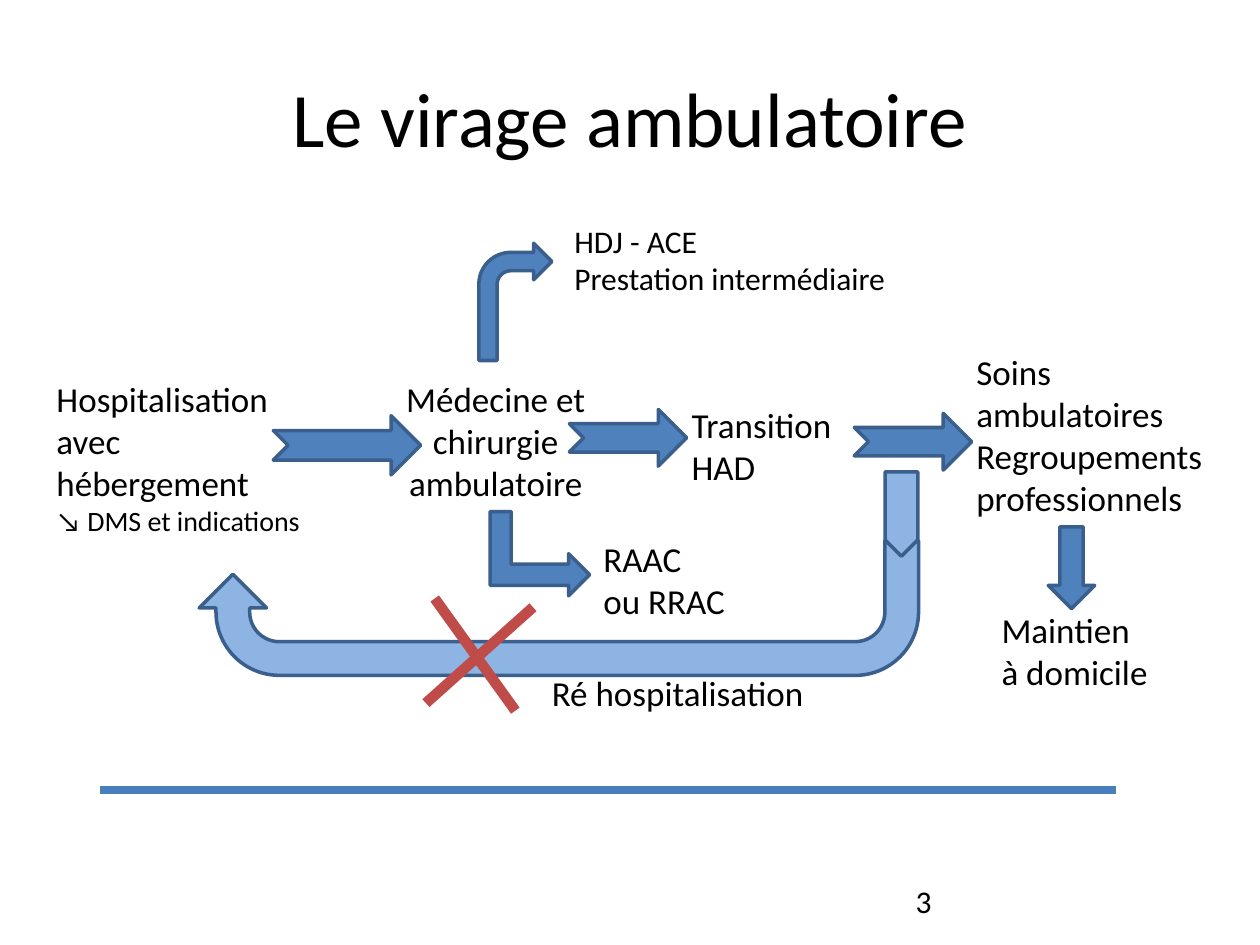
from lxml import etree
from pptx import Presentation
from pptx.dml.color import RGBColor
from pptx.enum import shapes, text
from pptx.oxml.ns import qn
from pptx.util import Pt

BLACK = RGBColor(0x00, 0x00, 0x00)
BLUE = RGBColor(0x4F, 0x81, 0xBD)
PALE_BLUE = RGBColor(0x8E, 0xB4, 0xE3)
OUTLINE = RGBColor(0x3A, 0x5F, 0x8C)
RULE_BLUE = RGBColor(0x4B, 0x7E, 0xBC)
RED = RGBColor(0xBF, 0x4C, 0x48)
KIND = shapes.MSO_SHAPE
CENTER = text.PP_ALIGN.CENTER

TITLE = "Le virage ambulatoire"
TITLE_BOX = (36, 21.6, 648, 90)

LABELS = [
    ([("Hospitalisation avec hébergement", 20), ("↘ DMS et indications", 16)],
     (25.2, 212.4, 153.4, 99.4), {}),
    ([("Médecine et ", 20), ("chirurgie ambulatoire", 20)],
     (223.2, 212.4, 120.2, 79.9), {"align": CENTER}),
    ([("HDJ - ACE", 18), ("Prestation intermédiaire", 18)],
     (321.1, 123.1, 214.6, 51.1), {}),
    ([("Soins ambulatoires Regroupements professionnels", 20)],
     (550.8, 196.6, 149.8, 104.4), {}),
    ([("Transition HAD", 20)], (388.1, 226.8, 110.9, 55.4), {}),
    ([("Ré hospitalisation", 20)], (308.2, 380.2, 159.8, 31.7), {"wrap": False}),
    ([("Maintien à domicile", 20)], (565.2, 344.2, 101.5, 55.4), {}),
    ([("RAAC", 20), ("ou RRAC", 20)], (337.7, 303.8, 92.9, 55.4), {}),
    ([("3", 18)], (516.2, 500.4, 167.8, 28.8),
     {"anchor": text.MSO_ANCHOR.MIDDLE}),
]

ARROWS = [
    (KIND.NOTCHED_RIGHT_ARROW, (156.2, 237.6, 84.2, 33.8), {}),
    (KIND.NOTCHED_RIGHT_ARROW, (325.4, 234, 67, 32.4), {}),
    (KIND.BENT_ARROW, (273.6, 139, 41.8, 67), {}),
    (KIND.NOTCHED_RIGHT_ARROW, (488.2, 236.2, 67, 32.4), {}),
    (KIND.U_TURN_ARROW, (113.8, 308.9, 411.1, 77),
     {"fill": PALE_BLUE, "rotation": 180,
      "adjustments": (0.25, 0.25, 0.25, 0.47, 0.75)}),
    (KIND.DOWN_ARROW, (599, 301, 26.6, 46.8), {}),
    (KIND.BENT_UP_ARROW, (284.4, 288, 48.2, 56.9), {"rotation": 90}),
    (KIND.PENTAGON, (491, 284.4, 48.2, 18.7),
     {"fill": PALE_BLUE, "rotation": 90}),
]

LINES = [
    ((56.9, 451.4), (637.9, 451.4), RULE_BLUE, 4.5),
    ((243.4, 401.8), (304.6, 347), RED, 6),
    ((294.5, 406.1), (248.4, 342), RED, 6),
]


def points(values):
    return [Pt(value) for value in values]


def write_text(frame, lines, align=text.PP_ALIGN.LEFT,
               anchor=text.MSO_ANCHOR.TOP, wrap=True):
    frame.word_wrap = wrap
    frame.vertical_anchor = anchor
    for index, (content, size) in enumerate(lines):
        paragraph = frame.add_paragraph() if index else frame.paragraphs[0]
        paragraph.alignment = align
        run = paragraph.add_run()
        run.text = content
        run.font.name = "Calibri"
        run.font.size = Pt(size)
        run.font.color.rgb = BLACK


def add_arrow(slide, kind, box, fill=BLUE, rotation=0, adjustments=()):
    shape = slide.shapes.add_shape(kind, *points(box))
    shape.shadow.inherit = False
    shape.fill.solid()
    shape.fill.fore_color.rgb = fill
    shape.line.color.rgb = OUTLINE
    shape.line.width = Pt(2)
    shape.rotation = rotation
    for index, value in enumerate(adjustments):
        shape.adjustments[index] = value


def add_line(slide, start, end, color, width):
    line = slide.shapes.add_connector(
        shapes.MSO_CONNECTOR.STRAIGHT, *points(start + end))
    line.line.color.rgb = color
    line.line.width = Pt(width)
    etree.SubElement(line._element.spPr, qn("a:effectLst"))


def main():
    presentation = Presentation()
    presentation.slide_width, presentation.slide_height = Pt(720), Pt(540)
    slide = presentation.slides.add_slide(presentation.slide_layouts[5])

    title = slide.shapes.title
    title.left, title.top, title.width, title.height = points(TITLE_BOX)
    write_text(title.text_frame, [(TITLE, 44)], align=CENTER,
               anchor=text.MSO_ANCHOR.MIDDLE)

    for kind, box, options in ARROWS:
        add_arrow(slide, kind, box, **options)
    for lines, box, options in LABELS:
        label = slide.shapes.add_textbox(*points(box))
        write_text(label.text_frame, lines, **options)
    for line in LINES:
        add_line(slide, *line)

    presentation.save("out.pptx")


if __name__ == "__main__":
    main()
